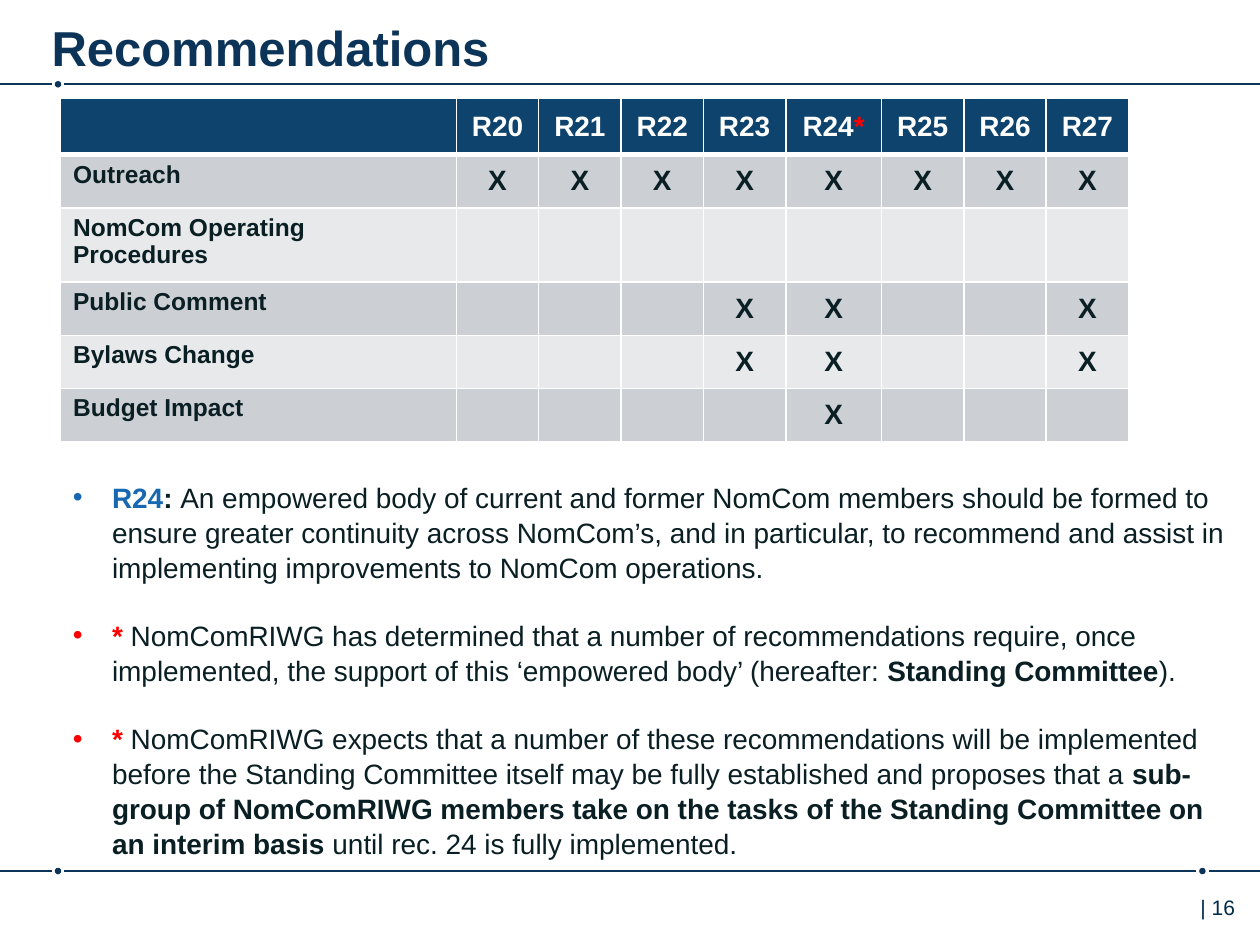
from lxml import etree
from pptx import Presentation
from pptx.dml.color import RGBColor
from pptx.enum.shapes import MSO_CONNECTOR as Connector, MSO_SHAPE as Shape
from pptx.enum.text import MSO_ANCHOR as Anchor, MSO_AUTO_SIZE as AutoSize, PP_ALIGN as Align
from pptx.oxml.ns import qn
from pptx.util import Cm, Pt

COLORS = {
    "navy": "0C3458", "page": "002B49", "header": "0D436C", "ink": "0A1F24",
    "blue": "1768B1", "red": "FF0000", "white": "FFFFFF",
    "band_dark": "CCCFD4", "band_light": "E7E9EB",
}
SLIDE_W, SLIDE_H = 25.4, 19.05

HEADINGS = ["R20", "R21", "R22", "R23", "R24*", "R25", "R26", "R27"]
MARKS = {
    "Outreach": HEADINGS,
    "NomCom Operating Procedures": [],
    "Public Comment": ["R23", "R24*", "R27"],
    "Bylaws Change": ["R23", "R24*", "R27"],
    "Budget Impact": ["R24*"],
}
COL_WIDTHS = [7.98] + [1.93 if h.endswith("*") else 1.66 for h in HEADINGS]
ROW_HEIGHTS = [1.14, 1.07, 1.5, 1.07, 1.07, 1.07]

# Each run: text, colour, bold
NOTES = [
    [("R24", "blue", True), (": ", "ink", True),
     ("An empowered body of current and former NomCom members should be formed to ensure "
      "greater continuity across NomCom’s, and in particular, to recommend and assist in "
      "implementing improvements to NomCom operations.", "ink", False)],
    [("* ", "red", True),
     ("NomComRIWG has determined that a number of recommendations require, once implemented, "
      "the support of this ‘empowered body’ (hereafter: ", "ink", False),
     ("Standing Committee", "ink", True), (").", "ink", False)],
    [("* ", "red", True),
     ("NomComRIWG expects that a number of these recommendations will be implemented before "
      "the Standing Committee itself may be fully established and proposes that a",
      "ink", False),
     (" sub-group of NomComRIWG members take on the tasks of the Standing Committee on an "
      "interim basis ", "ink", True),
     ("until rec. 24 is fully implemented.", "ink", False)],
]


def rgb(name):
    return RGBColor.from_string(COLORS[name])


class SlideBuilder:
    font = "Arial"
    dot_size = 0.13
    dot_gap = 0.13

    def __init__(self, slide):
        self.s = slide

    def run(self, p, text, size, color, bold=False):
        r = p.add_run()
        r.text = text
        r.font.name, r.font.size, r.font.bold = self.font, Pt(size), bold
        r.font.color.rgb = rgb(color)

    def title(self, text, x, y, w, h):
        sp = self.s.shapes.title
        sp.left, sp.top, sp.width, sp.height = Cm(x), Cm(y), Cm(w), Cm(h)
        tf = sp.text_frame
        tf.auto_size = AutoSize.NONE
        tf.vertical_anchor = Anchor.TOP
        tf.margin_left = tf.margin_right = 0
        tf.margin_top = Cm(0.23)
        tf.paragraphs[0].alignment = Align.LEFT
        self.run(tf.paragraphs[0], text, 28, "navy", True)

    def text_box(self, x, y, w, h):
        tf = self.s.shapes.add_textbox(Cm(x), Cm(y), Cm(w), Cm(h)).text_frame
        tf.word_wrap = True
        return tf

    def dotted_rule(self, y, dots):
        """Draw a full-width rule broken around each dot."""
        edges = [0]
        for x in dots:
            self.dot(x, y)
            edges += [x - self.dot_gap, x + self.dot_gap]
        edges.append(SLIDE_W)
        for start, end in zip(edges[::2], edges[1::2]):
            self.line(start, end, y)

    def dot(self, x, y):
        d = self.dot_size
        sp = self.s.shapes.add_shape(Shape.OVAL, Cm(x - d / 2), Cm(y - d / 2), Cm(d), Cm(d))
        sp.shadow.inherit = False
        sp.fill.solid()
        sp.fill.fore_color.rgb = rgb("navy")
        sp.line.fill.background()

    def line(self, x1, x2, y):
        c = self.s.shapes.add_connector(Connector.STRAIGHT, Cm(x1), Cm(y), Cm(x2), Cm(y))
        c.line.color.rgb = rgb("navy")
        c.line.width = Pt(1)
        etree.SubElement(c._element.spPr, qn("a:effectLst"))

    def cell(self, cell, fill, top=1, bottom=1):
        """Fill a cell and give it white borders."""
        cell.fill.solid()
        cell.fill.fore_color.rgb = rgb(fill)
        tcPr = cell._tc.get_or_add_tcPr()
        borders = {"lnL": 1, "lnR": 1, "lnT": top, "lnB": bottom}
        for i, (tag, width) in enumerate(borders.items()):
            ln = etree.Element(qn(f"a:{tag}"), w=str(Pt(width)))
            solid = etree.SubElement(ln, qn("a:solidFill"))
            etree.SubElement(solid, qn("a:srgbClr"), val=COLORS["white"])
            tcPr.insert(i, ln)

    def centered(self, cell):
        cell.vertical_anchor = Anchor.MIDDLE
        p = cell.text_frame.paragraphs[0]
        p.alignment = Align.CENTER
        return p

    def matrix(self, x, y):
        shape = self.s.shapes.add_table(len(ROW_HEIGHTS), len(COL_WIDTHS), Cm(x), Cm(y),
                                        Cm(sum(COL_WIDTHS)), Cm(sum(ROW_HEIGHTS)))
        table = shape.table
        for col, width in zip(table.columns, COL_WIDTHS):
            col.width = Cm(width)
        for row, height in zip(table.rows, ROW_HEIGHTS):
            row.height = Cm(height)
        for c in range(len(COL_WIDTHS)):
            self.cell(table.cell(0, c), "header", bottom=3)
        for c, heading in enumerate(HEADINGS, 1):
            p = self.centered(table.cell(0, c))
            self.run(p, heading.rstrip("*"), 16, "white", True)
            if heading.endswith("*"):
                self.run(p, "*", 16, "red", True)
        for r, (label, marked) in enumerate(MARKS.items(), 1):
            fill = "band_dark" if r % 2 else "band_light"
            for c in range(len(COL_WIDTHS)):
                self.cell(table.cell(r, c), fill, top=3 if r == 1 else 1)
            self.run(table.cell(r, 0).text_frame.paragraphs[0], label, 14, "ink", True)
            for c, heading in enumerate(HEADINGS, 1):
                if heading in marked:
                    self.run(self.centered(table.cell(r, c)), "X", 16, "ink", True)

    def bullets(self, notes, x, y, w, h):
        tf = self.text_box(x, y, w, h)
        for i, note in enumerate(notes):
            p = tf.paragraphs[0] if i == 0 else tf.add_paragraph()
            pPr = p._p.get_or_add_pPr()
            pPr.set("marL", str(Cm(0.79)))
            pPr.set("indent", str(-Cm(0.79)))
            color = etree.SubElement(pPr, qn("a:buClr"))
            etree.SubElement(color, qn("a:srgbClr"), val=COLORS[note[0][1]])
            etree.SubElement(pPr, qn("a:buFont"), typeface=self.font)
            etree.SubElement(pPr, qn("a:buChar"), char="•")
            p.line_spacing = 1.04
            if i:
                p.space_before = Pt(19.2)
            for text, run_color, bold in note:
                self.run(p, text, 16, run_color, bold)

    def page_number(self, text, x, y, w, h):
        tf = self.text_box(x, y, w, h)
        tf.margin_left = Cm(0.6)
        tf.margin_right = 0
        self.run(tf.paragraphs[0], text, 12, "page")


def main():
    prs = Presentation()
    prs.slide_width, prs.slide_height = Cm(SLIDE_W), Cm(SLIDE_H)
    b = SlideBuilder(prs.slides.add_slide(prs.slide_layouts[5]))
    b.dotted_rule(1.7, [1.17])
    b.dotted_rule(17.56, [1.17, 24.24])
    b.page_number("| 16", 23.6, 17.91, 2.21, 1.02)
    b.title("Recommendations", 1.04, 0.13, 22.25, 1.24)
    b.matrix(1.22, 1.98)
    b.bullets(NOTES, 1.22, 9.53, 23.98, 7.77)
    prs.save("out.pptx")


if __name__ == "__main__":
    main()
